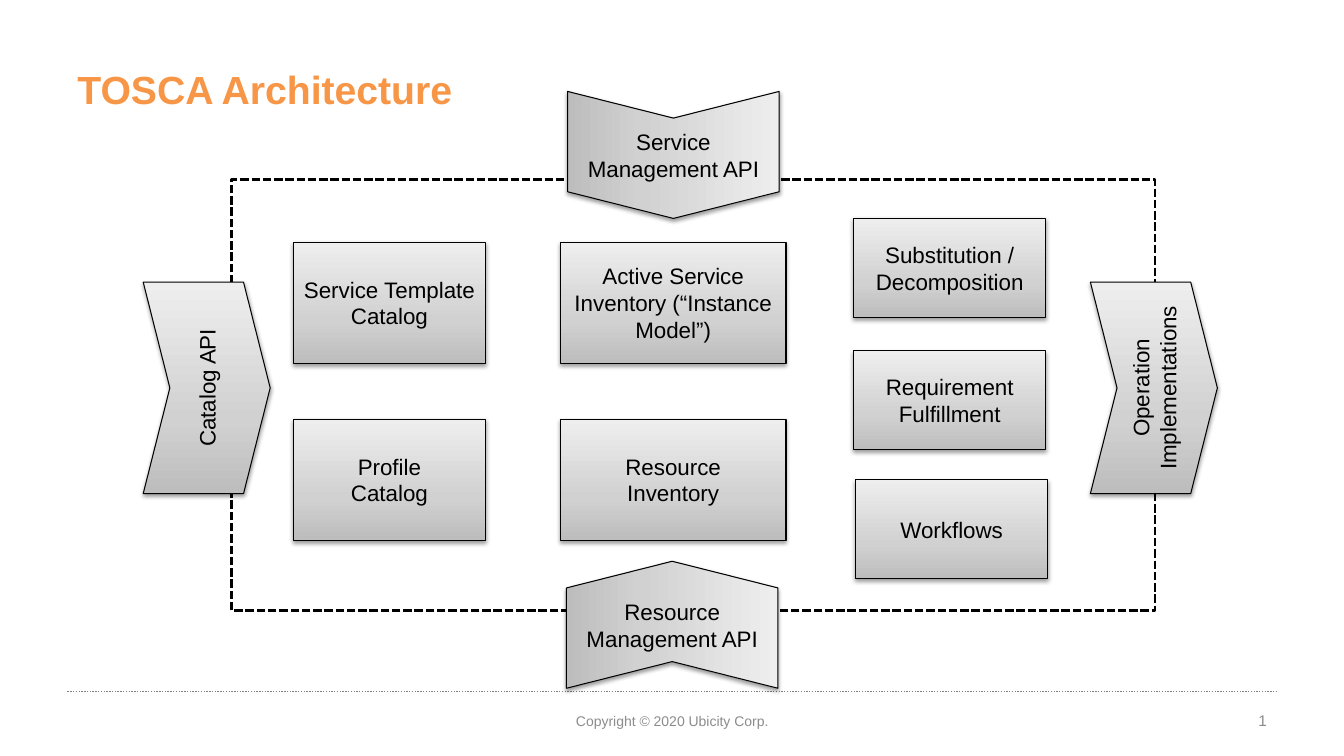
from pptx import Presentation
from pptx import util as u
from pptx.dml.color import RGBColor
from pptx.enum import dml, shapes, text
from pptx.oxml import parse_xml
from pptx.oxml.ns import nsdecls, qn

ORANGE = RGBColor(0xF7, 0x96, 0x46)
BLACK = RGBColor(0, 0, 0)
RULE_GREY = RGBColor(0x80, 0x80, 0x80)
FOOTER_GREY = RGBColor(0x8C, 0x8C, 0x8C)

GRADIENT_STOPS = (
    f'<a:gsLst {nsdecls("a")}>'
    '<a:gs pos="0"><a:srgbClr val="BDBDBD"/></a:gs>'
    '<a:gs pos="35000"><a:srgbClr val="D1D1D1"/></a:gs>'
    '<a:gs pos="100000"><a:srgbClr val="EEEEEE"/></a:gs></a:gsLst>'
)
SOFT_SHADOW = (
    f'<a:outerShdw {nsdecls("a")} blurRad="40000" dist="20000" dir="5400000" rotWithShape="0">'
    '<a:srgbClr val="000000"><a:alpha val="38000"/></a:srgbClr></a:outerShdw>'
)

prs = Presentation()
prs.slide_width, prs.slide_height = u.Cm(33.87), u.Cm(19.05)
slide = prs.slides.add_slide(prs.slide_layouts[6])


def write(shape, wording, size, color, align):
    frame = shape.text_frame
    frame.word_wrap = True
    frame.vertical_anchor = text.MSO_ANCHOR.MIDDLE
    frame.text = wording
    for paragraph in frame.paragraphs:
        paragraph.alignment = align
        paragraph.font.name = "Arial"
        paragraph.font.size = u.Pt(size)
        paragraph.font.color.rgb = color


def add_block(kind, wording, left, top, width, height):
    block = slide.shapes.add_shape(kind, u.Cm(left), u.Cm(top), u.Cm(width), u.Cm(height))
    block.fill.gradient()
    block.fill.gradient_angle = 90
    properties = block.element.spPr
    stops = properties.find(".//" + qn("a:gsLst"))
    stops.getparent().replace(stops, parse_xml(GRADIENT_STOPS))
    block.line.color.rgb = BLACK
    block.line.width = u.Pt(0.75)
    block.shadow.inherit = False
    properties.find(qn("a:effectLst")).append(parse_xml(SOFT_SHADOW))
    write(block, wording, 16, BLACK, text.PP_ALIGN.CENTER)
    return block


# Footer rule
rule = slide.shapes.add_connector(
    shapes.MSO_CONNECTOR.STRAIGHT, u.Cm(1.7), u.Cm(17.42), u.Cm(32.16), u.Cm(17.42))
rule.line.color.rgb = RULE_GREY
rule.line.width = u.Pt(1)
rule.line.dash_style = dml.MSO_LINE.ROUND_DOT
rule.element.spPr.append(parse_xml(f'<a:effectLst {nsdecls("a")}/>'))

# Title, copyright and slide number
title = slide.shapes.add_textbox(u.Cm(1.7), u.Cm(1.14), u.Cm(30.48), u.Cm(2.21))
write(title, "TOSCA Architecture", 28, ORANGE, text.PP_ALIGN.LEFT)
title.text_frame.paragraphs[0].font.bold = True

copyright_line = slide.shapes.add_textbox(u.Cm(11.58), u.Cm(17.65), u.Cm(10.72), u.Cm(1.02))
write(copyright_line, "Copyright © 2020 Ubicity Corp.", 10, FOOTER_GREY, text.PP_ALIGN.CENTER)

slide_number = slide.shapes.add_textbox(u.Cm(24.28), u.Cm(17.65), u.Cm(7.9), u.Cm(1.02))
write(slide_number, "1", 11, FOOTER_GREY, text.PP_ALIGN.RIGHT)

# Dashed system boundary
boundary = slide.shapes.add_shape(
    shapes.MSO_SHAPE.RECTANGLE, u.Cm(5.84), u.Cm(4.52), u.Cm(23.27), u.Cm(10.87))
boundary.fill.background()
boundary.line.color.rgb = BLACK
boundary.line.width = u.Pt(2)
boundary.line.dash_style = dml.MSO_LINE.SQUARE_DOT
boundary.shadow.inherit = False

# Catalogs and inventories: two columns of two
stores = [
    (7.39, 4.85, ["Service Template Catalog", "Profile\nCatalog"]),
    (14.12, 5.69, ["Active Service\nInventory (“Instance Model”)", "Resource\nInventory"]),
]
for left, width, wordings in stores:
    for row, wording in enumerate(wordings):
        add_block(shapes.MSO_SHAPE.RECTANGLE, wording, left, 6.1 + row * 4.46, width, 3.05)

# Processing functions
functions = [
    ("Substitution / Decomposition", 21.51, 5.51),
    ("Requirement Fulfillment", 21.51, 8.84),
    ("Workflows", 21.56, 12.09),
]
for wording, left, top in functions:
    add_block(shapes.MSO_SHAPE.RECTANGLE, wording, left, top, 4.85, 2.49)

# Interfaces across the boundary
interfaces = [
    ("Catalog API", 3.61, 7.11, 0),
    ("Operation Implementations", 27.48, 7.11, 0),
    ("Service Management API", 15.37, 1.24, 90),
    ("Resource Management API", 15.34, 13.08, 270),
]
for wording, left, top, rotation in interfaces:
    interface = add_block(shapes.MSO_SHAPE.CHEVRON, wording, left, top, 3.2, 5.33)
    interface.adjustments[0] = 0.21
    interface.rotation = rotation
    interface.text_frame._txBody.bodyPr.set("vert", "vert270")
    if rotation == 270:
        interface.element.spPr.xfrm.set("flipV", "1")

prs.save("out.pptx")
